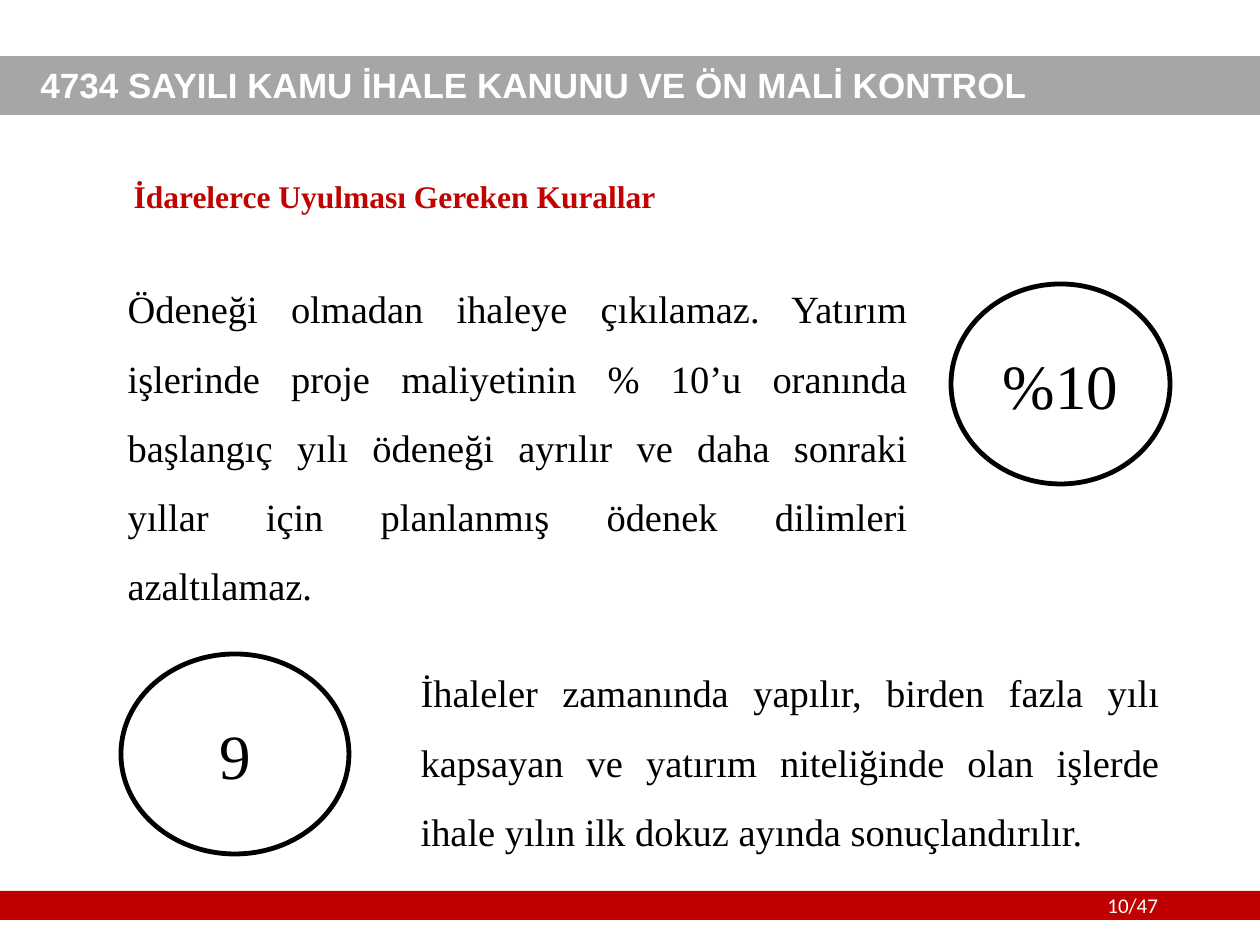
from pptx import Presentation
from pptx.dml.color import RGBColor
from pptx.enum.shapes import MSO_SHAPE
from pptx.enum.text import MSO_ANCHOR, MSO_AUTO_SIZE, PP_ALIGN
from pptx.oxml.ns import qn
from pptx.util import Emu, Pt

RECTANGLE, OVAL = MSO_SHAPE.RECTANGLE, MSO_SHAPE.OVAL
TOP, MIDDLE = MSO_ANCHOR.TOP, MSO_ANCHOR.MIDDLE
LEFT, CENTER, JUSTIFY = PP_ALIGN.LEFT, PP_ALIGN.CENTER, PP_ALIGN.JUSTIFY
NO_AUTOFIT = MSO_AUTO_SIZE.NONE
TWO_CONTENT_LAYOUT = 3

EMU_PER_PX = 914400 / 126
SERIF = "Times New Roman"
COLORS = {
    "white": "FFFFFF",
    "black": "000000",
    "band": "A6A6A6",
    "footer": "C00000",
    "heading": "C00300",
}
FORMATS = {
    "banner": {
        "font": {"name": "Arial", "size": Pt(20), "bold": True},
        "paragraph": {"alignment": LEFT, "line_spacing": 0.9},
        "anchor": MIDDLE, "color": "white",
    },
    "page": {
        "font": {"name": "Calibri", "size": Pt(12)},
        "paragraph": {"alignment": LEFT},
        "anchor": TOP, "color": "white",
    },
    "heading": {
        "font": {"name": SERIF, "size": Pt(18), "bold": True},
        "paragraph": {"alignment": LEFT, "line_spacing": 0.9},
        "anchor": TOP, "color": "heading",
    },
    "rule": {
        "font": {"name": SERIF, "size": Pt(22)},
        "paragraph": {"alignment": JUSTIFY, "line_spacing": 1.5, "space_before": Pt(0)},
        "anchor": TOP, "color": "black",
    },
    "figure": {
        "font": {"name": SERIF, "size": Pt(36)},
        "paragraph": {"alignment": CENTER},
        "anchor": MIDDLE, "color": "black",
    },
}


def rgb(color):
    return RGBColor.from_string(COLORS[color])


def emu(box):
    return [Emu(round(px * EMU_PER_PX)) for px in box]


def inside(region, part):
    return (region[0] + part[0], region[1] + part[1], part[2], part[3])


def set_attributes(target, values):
    for attribute, value in values.items():
        setattr(target, attribute, value)


def write(holder, text, style):
    values = FORMATS[style]
    frame = holder.text_frame
    frame.text = text
    set_attributes(frame, {"word_wrap": True, "auto_size": NO_AUTOFIT,
                           "vertical_anchor": values["anchor"]})
    paragraph = frame.paragraphs[0]
    if holder.is_placeholder:
        properties = paragraph._p.get_or_add_pPr()
        properties.set("marL", "0")
        properties.set("indent", "0")
        properties.append(properties.makeelement(qn("a:buNone"), {}))
    set_attributes(paragraph, values["paragraph"])
    font = paragraph.runs[0].font
    set_attributes(font, values["font"])
    font.color.rgb = rgb(values["color"])


def fill_placeholder(placeholder, box, text, style):
    set_attributes(placeholder, dict(zip(("left", "top", "width", "height"), emu(box))))
    write(placeholder, text, style)


def add_filled(slide, kind, box, color):
    filled = slide.shapes.add_shape(kind, *emu(box))
    filled.shadow.inherit = False
    filled.fill.solid()
    filled.fill.fore_color.rgb = rgb(color)
    filled.line.fill.background()
    return filled


def add_band(slide, region, color, label_box, label, style):
    add_filled(slide, RECTANGLE, region, color)
    caption = slide.shapes.add_textbox(*emu(inside(region, label_box)))
    write(caption, label, style)


def add_rule(slide, region, placeholder, text_box, text, circle_box, figure):
    fill_placeholder(placeholder, inside(region, text_box), text, "rule")
    circle = add_filled(slide, OVAL, inside(region, circle_box), "white")
    circle.line.color.rgb = rgb("black")
    circle.line.width = Pt(2.75)
    write(circle, figure, "figure")


def main():
    presentation = Presentation()
    presentation.slide_width, presentation.slide_height = emu((1260, 945))
    slide = presentation.slides.add_slide(presentation.slide_layouts[TWO_CONTENT_LAYOUT])
    heading, budget_rule, timing_rule = slide.placeholders

    add_band(slide, (0, 891, 1260, 29), "footer", (1095, -5, 117, 38), "10/47", "page")
    add_band(slide, (0, 56, 1260, 59), "band", (28, 2, 1140, 59),
             "4734 SAYILI KAMU İHALE KANUNU VE ÖN MALİ KONTROL", "banner")
    fill_placeholder(heading, (121, 175, 1139, 59),
                     "İdarelerce Uyulması Gereken Kurallar", "heading")
    add_rule(slide, (115, 256, 1057, 365), budget_rule, (0, 0, 805, 365),
             "Ödeneği olmadan ihaleye çıkılamaz. Yatırım işlerinde proje maliyetinin "
             "% 10’u oranında başlangıç yılı ödeneği ayrılır ve daha sonraki yıllar için "
             "planlanmış ödenek dilimleri azaltılamaz.",
             (836, 28, 219, 200), "%10")
    add_rule(slide, (121, 640, 1051, 214), timing_rule, (287, 0, 764, 214),
             "İhaleler zamanında yapılır, birden fazla yılı kapsayan ve yatırım niteliğinde "
             "olan işlerde ihale yılın ilk dokuz ayında sonuçlandırılır.",
             (0, 14, 228, 200), "9")
    presentation.save("out.pptx")


if __name__ == "__main__":
    main()
